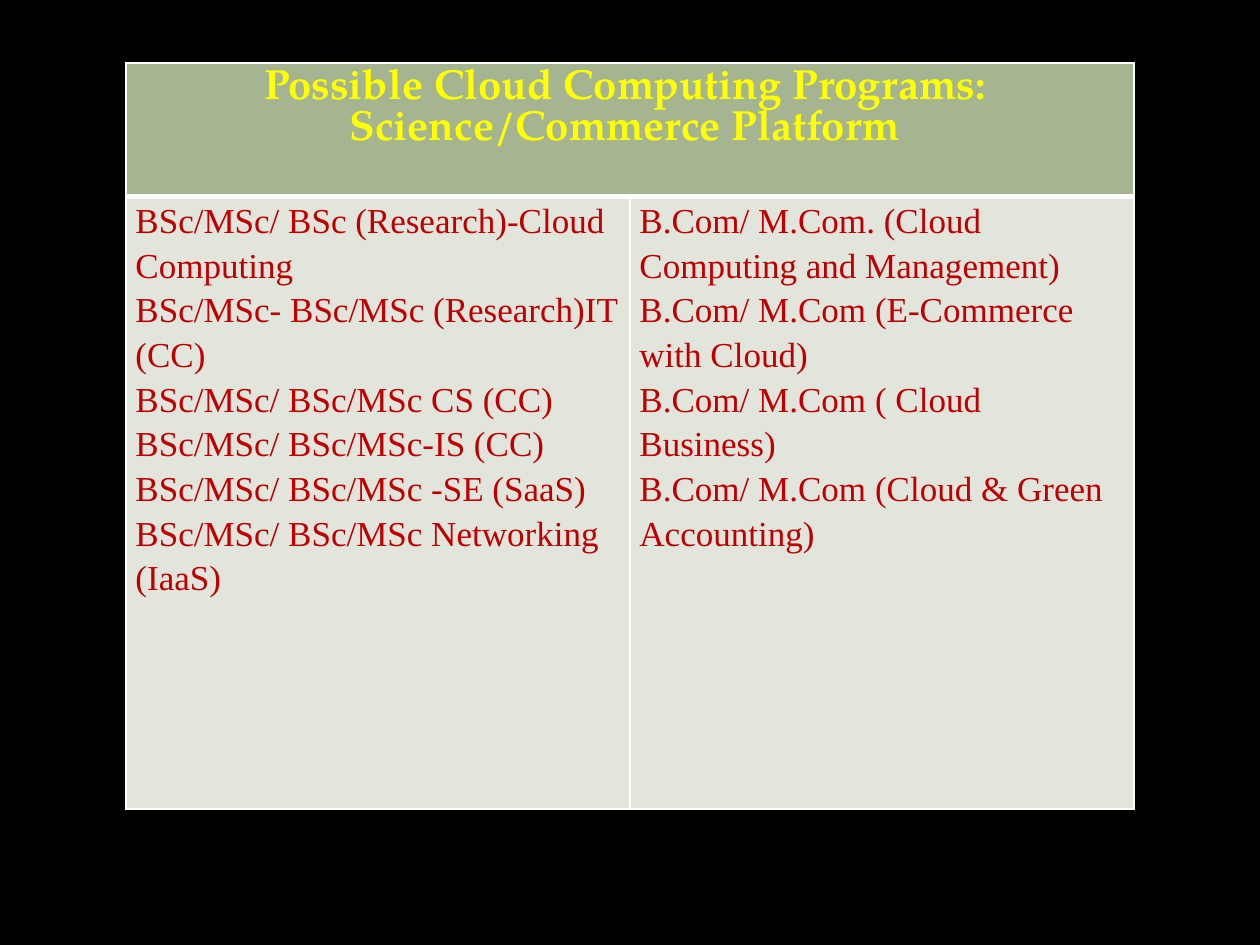
from dataclasses import dataclass

from lxml import etree
from pptx import Presentation
from pptx.dml.color import RGBColor
from pptx.enum import text
from pptx.oxml import ns
from pptx.util import Pt

BLACK = RGBColor(0x00, 0x00, 0x00)
WHITE = RGBColor(0xFF, 0xFF, 0xFF)
YELLOW = RGBColor(0xFF, 0xFF, 0x00)
RED = RGBColor(0xC0, 0x00, 0x00)
GREEN = RGBColor(0xA5, 0xB5, 0x92)
PALE_GREEN = RGBColor(0xE1, 0xE5, 0xDC)

COL_W = 288
ROW_HEIGHTS = (76.3, 349.9)
THIN, THICK = 1, 3


@dataclass
class ProgramColumn:
    programs: list[str]


HEADING = ["Possible Cloud Computing Programs: ", "Science/Commerce Platform "]
COLUMNS = [
    ProgramColumn([
        "BSc/MSc/ BSc (Research)-Cloud Computing",
        "BSc/MSc- BSc/MSc (Research)IT (CC)",
        "BSc/MSc/ BSc/MSc CS (CC)",
        "BSc/MSc/ BSc/MSc-IS (CC)",
        "BSc/MSc/ BSc/MSc -SE (SaaS)",
        "BSc/MSc/ BSc/MSc Networking (IaaS)",
    ]),
    ProgramColumn([
        "B.Com/ M.Com. (Cloud Computing and Management)",
        "B.Com/ M.Com (E-Commerce with Cloud)",
        "B.Com/ M.Com ( Cloud Business)",
        "B.Com/ M.Com (Cloud & Green Accounting)",
    ]),
]


def write(tf, lines: list[str], *, font: str, size: float, color: RGBColor,
          bold: bool = False, align=text.PP_ALIGN.LEFT, spacing=None) -> None:
    """Write one paragraph per line."""
    for i, line in enumerate(lines):
        p = tf.add_paragraph() if i else tf.paragraphs[0]
        p.alignment = align
        p.line_spacing = spacing
        r = p.add_run()
        r.text = line
        r.font.name, r.font.size, r.font.bold = font, Pt(size), bold
        r.font.color.rgb = color


def style_cell(cell, fill: RGBColor, top: float = THIN, bottom: float = THIN) -> None:
    """Give a cell white borders and a solid fill."""
    tc_pr = cell._tc.get_or_add_tcPr()
    for side, width in zip("LRTB", (THIN, THIN, top, bottom)):
        ln = etree.SubElement(tc_pr, ns.qn(f"a:ln{side}"), w=str(Pt(width)))
        solid = etree.SubElement(ln, ns.qn("a:solidFill"))
        etree.SubElement(solid, ns.qn("a:srgbClr"), val=str(WHITE))
    cell.fill.solid()
    cell.fill.fore_color.rgb = fill


def main() -> None:
    prs = Presentation()
    prs.slide_width, prs.slide_height = Pt(720), Pt(540)
    s = prs.slides.add_slide(prs.slide_layouts[6])
    s.background.fill.solid()
    s.background.fill.fore_color.rgb = BLACK

    # Table grid
    table = s.shapes.add_table(2, len(COLUMNS), Pt(72), Pt(36),
                               Pt(COL_W * len(COLUMNS)), Pt(sum(ROW_HEIGHTS))).table
    table.horz_banding = False
    for row, height in zip(table.rows, ROW_HEIGHTS):
        row.height = Pt(height)

    # Heading across both columns
    for cell in table.rows[0].cells:
        style_cell(cell, GREEN, bottom=THICK)
    heading = table.cell(0, 0)
    heading.merge(table.cell(0, len(COLUMNS) - 1))
    write(heading.text_frame, HEADING, font="TeX Gyre Pagella", size=24,
          color=YELLOW, bold=True, align=text.PP_ALIGN.CENTER)

    # Program lists
    for i, column in enumerate(COLUMNS):
        table.columns[i].width = Pt(COL_W)
        cell = table.cell(1, i)
        style_cell(cell, PALE_GREEN, top=THICK)
        cell.margin_left = cell.margin_right = Pt(5.4)
        cell.margin_top = cell.margin_bottom = Pt(0)
        write(cell.text_frame, column.programs, font="Times New Roman", size=20,
              color=RED, spacing=1.15)

    prs.save("out.pptx")


if __name__ == "__main__":
    main()
